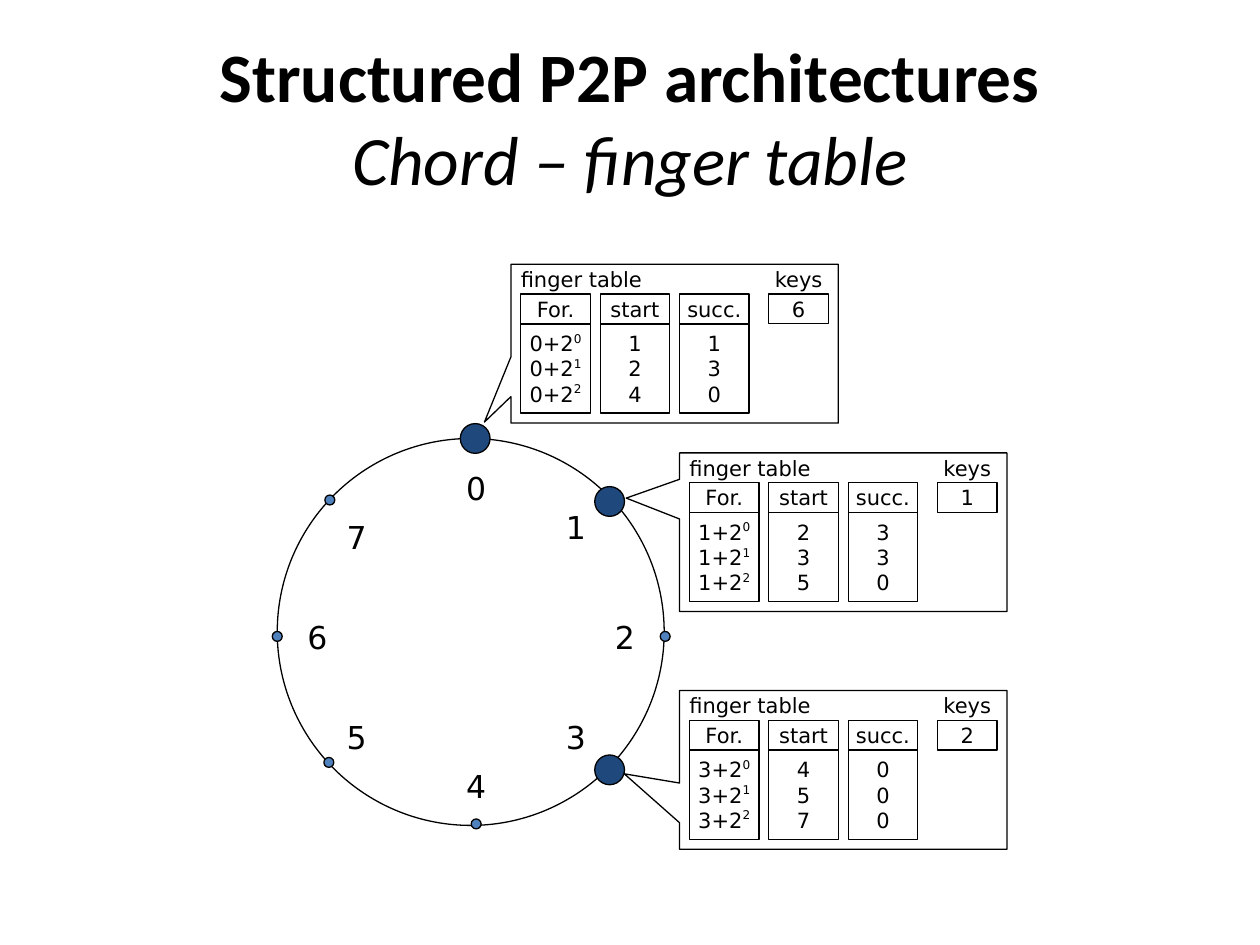
import pptx
import pptx.util
import pptx.dml.color
import pptx.enum.shapes
import pptx.enum.text

Cm, Pt = pptx.util.Cm, pptx.util.Pt
SHAPE = pptx.enum.shapes.MSO_SHAPE
ALIGN = pptx.enum.text.PP_ALIGN
MIDDLE = pptx.enum.text.MSO_ANCHOR.MIDDLE

COLORS = {"ink": "000000", "peer": "1F497D", "empty": "4F81BD"}
TITLE_FONT, DIAGRAM_FONT = "Calibri", "DejaVu Sans"

TITLE = ("Structured P2P architectures", "Chord – finger table")

# Ring position: dot centre, label centre, whether a peer sits there (cm)
NODES = [
    (9.58, 8.84, 9.6, 9.84, True),
    (12.29, 10.11, 11.61, 10.63, True),
    (13.41, 12.83, 12.6, 12.84, False),
    (12.29, 15.52, 11.61, 14.85, True),
    (9.6, 16.61, 9.6, 15.84, False),
    (6.63, 15.37, 7.19, 14.85, False),
    (5.59, 12.83, 6.4, 12.84, False),
    (6.65, 10.08, 7.19, 10.83, False),
]
RING = (5.59, 8.84, 7.8, 7.8)

FINGER_TABLES = [
    {"node": 0, "at": (10.3, 5.33), "tip": (-0.581, 0.494),
     "start": "124", "succ": "130", "key": "6"},
    {"node": 1, "at": (13.7, 9.13), "tip": (-0.663, -0.215),
     "start": "235", "succ": "330", "key": "1"},
    {"node": 3, "at": (13.7, 13.92), "tip": (-0.669, 0.025),
     "start": "457", "succ": "000", "key": "2"},
]
CALLOUT_SIZE = (6.6, 3.2)
MARGIN, COLUMN_WIDTH, COLUMN_PITCH = 0.2, 1.4, 1.6
ROW_HEIGHT, BODY_HEIGHT = 0.6, 1.8
KEYS_OFFSET, KEYS_WIDTH = 5.2, 1.2

presentation = pptx.Presentation()
presentation.slide_width, presentation.slide_height = Cm(25.4), Cm(19.05)
slide = presentation.slides.add_slide(presentation.slide_layouts[6])


def rgb(name):
    return pptx.dml.color.RGBColor.from_string(COLORS[name])


def add_outline(kind, x, y, width, height, fill=None):
    shape = slide.shapes.add_shape(kind, Cm(x), Cm(y), Cm(width), Cm(height))
    shape.shadow.inherit = False
    if fill:
        shape.fill.solid()
        shape.fill.fore_color.rgb = rgb(fill)
    else:
        shape.fill.background()
    shape.line.color.rgb = rgb("ink")
    shape.line.width = Pt(0.75)
    return shape


def add_disc(x, y, diameter, fill):
    """Add a filled circle centred on x, y."""
    add_outline(SHAPE.OVAL, x - diameter / 2, y - diameter / 2,
                diameter, diameter, fill)


def add_label(x, y, width, height):
    return slide.shapes.add_textbox(Cm(x), Cm(y), Cm(width), Cm(height))


def write(shape, lines, size=12, align=ALIGN.CENTER):
    """Fill a shape with lines, each a (text, superscript) pair."""
    frame = shape.text_frame
    frame.word_wrap = False
    frame.vertical_anchor = MIDDLE
    frame.margin_left = frame.margin_right = 0
    for index, (text, superscript) in enumerate(lines):
        paragraph = frame.add_paragraph() if index else frame.paragraphs[0]
        paragraph.alignment = align
        paragraph.font.name = DIAGRAM_FONT
        paragraph.font.size = Pt(size)
        paragraph.font.color.rgb = rgb("ink")
        paragraph.add_run().text = text
        if superscript:
            exponent = paragraph.add_run()
            exponent.text = superscript
            exponent.font._element.set("baseline", "40000")


def add_finger_table(node, at, tip, start, succ, key):
    left, top = at
    callout = add_outline(SHAPE.RECTANGULAR_CALLOUT, left, top, *CALLOUT_SIZE)
    callout.adjustments[0], callout.adjustments[1] = tip

    write(add_label(left + MARGIN, top, 4.2, ROW_HEIGHT),
          [("finger table", "")], align=ALIGN.LEFT)

    columns = [
        ("For.", [(f"{node}+2", str(power)) for power in range(3)]),
        ("start", [(value, "") for value in start]),
        ("succ.", [(value, "") for value in succ]),
    ]
    header_top = top + ROW_HEIGHT
    for index, (heading, values) in enumerate(columns):
        x = left + MARGIN + index * COLUMN_PITCH
        write(add_outline(SHAPE.RECTANGLE, x, header_top,
                          COLUMN_WIDTH, ROW_HEIGHT), [(heading, "")])
        write(add_outline(SHAPE.RECTANGLE, x, header_top + ROW_HEIGHT,
                          COLUMN_WIDTH, BODY_HEIGHT), values)

    x = left + KEYS_OFFSET
    write(add_label(x, top, KEYS_WIDTH, ROW_HEIGHT), [("keys", "")])
    write(add_outline(SHAPE.RECTANGLE, x, header_top, KEYS_WIDTH, ROW_HEIGHT),
          [(key, "")])


def add_title():
    title = add_label(1.27, 0.76, 22.86, 3.18).text_frame
    title.word_wrap = True
    title.vertical_anchor = MIDDLE
    paragraph = title.paragraphs[0]
    paragraph.alignment = ALIGN.CENTER
    paragraph.font.name = TITLE_FONT
    paragraph.font.size = Pt(39.6)
    paragraph.font.color.rgb = rgb("ink")
    topic = paragraph.add_run()
    topic.text = TITLE[0]
    topic.font.bold = True
    paragraph.add_line_break()
    subtopic = paragraph.add_run()
    subtopic.text = TITLE[1]
    subtopic.font.italic = True


add_title()
add_outline(SHAPE.OVAL, *RING)
for number, (dot_x, dot_y, label_x, label_y, is_peer) in enumerate(NODES):
    add_disc(dot_x, dot_y, *((0.6, "peer") if is_peer else (0.2, "empty")))
    write(add_label(label_x - 0.4, label_y - 0.4, 0.8, 0.8),
          [(str(number), "")], size=18)
for finger_table in FINGER_TABLES:
    add_finger_table(**finger_table)

presentation.save("out.pptx")
